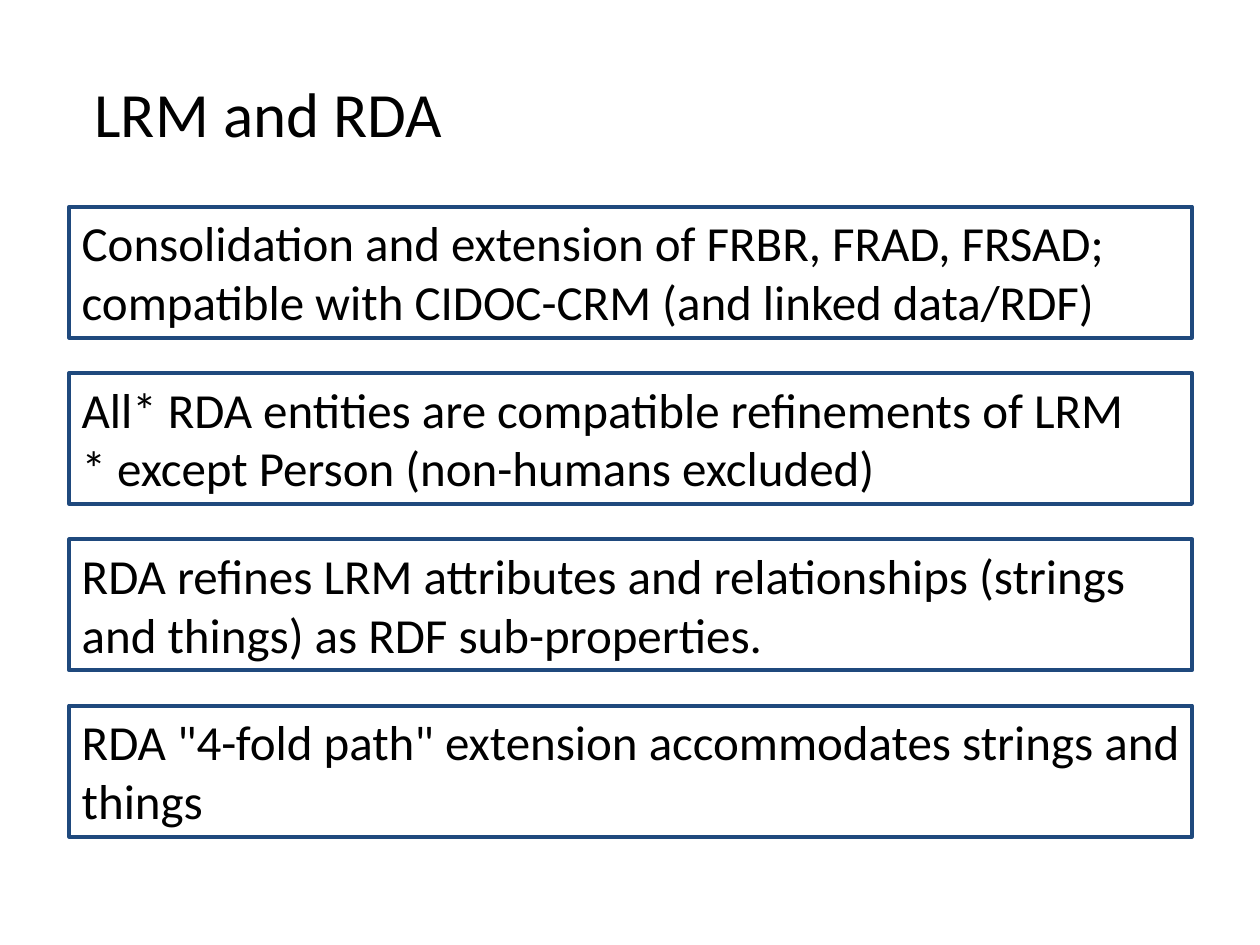
import pptx
import pptx.util
import pptx.dml.color
import pptx.enum.shapes
import pptx.enum.text

Inches = pptx.util.Inches
Pt = pptx.util.Pt
BLACK = pptx.dml.color.RGBColor(0x00, 0x00, 0x00)
NAVY = pptx.dml.color.RGBColor(0x1F, 0x49, 0x7D)


def write(shape, lines, size, wrap):
    frame = shape.text_frame
    form = {
        "word_wrap": wrap,
        "auto_size": pptx.enum.text.MSO_AUTO_SIZE.SHAPE_TO_FIT_TEXT,
        "vertical_anchor": pptx.enum.text.MSO_ANCHOR.TOP,
    }
    for key, value in form.items():
        setattr(frame, key, value)
    frame.text = "\n".join(lines)
    for para in frame.paragraphs:
        para.alignment = pptx.enum.text.PP_ALIGN.LEFT
        for key, value in {"name": "Calibri", "size": Pt(size)}.items():
            setattr(para.font, key, value)
        para.font.color.rgb = BLACK


deck = pptx.Presentation()
deck.slide_width = Inches(10)
deck.slide_height = Inches(7.5)
slide = deck.slides.add_slide(deck.slide_layouts[5])

# Title
title = slide.shapes.title
place = {"left": 0.65, "top": 0.54, "width": 2.99, "height": 0.71}
for key, value in place.items():
    setattr(title, key, Inches(value))
write(title, ["LRM and RDA"], 36, False)

# Framed statements, evenly stacked
notes = [
    ["Consolidation and extension of FRBR, FRAD, FRSAD; "
     "compatible with CIDOC-CRM (and linked data/RDF)"],
    ["All* RDA entities are compatible refinements of LRM",
     "* except Person (non-humans excluded)"],
    ["RDA refines LRM attributes and relationships "
     "(strings and things) as RDF sub-properties."],
    ['RDA "4-fold path" extension accommodates strings and things'],
]
for row, lines in enumerate(notes):
    box = slide.shapes.add_shape(
        pptx.enum.shapes.MSO_SHAPE.RECTANGLE,
        Inches(0.55), Inches(1.64 + 1.32 * row), Inches(8.91), Inches(1.04))
    box.shadow.inherit = False
    box.fill.background()
    box.line.color.rgb = NAVY
    box.line.width = Pt(2.25)
    write(box, lines, 28, True)

deck.save("out.pptx")
